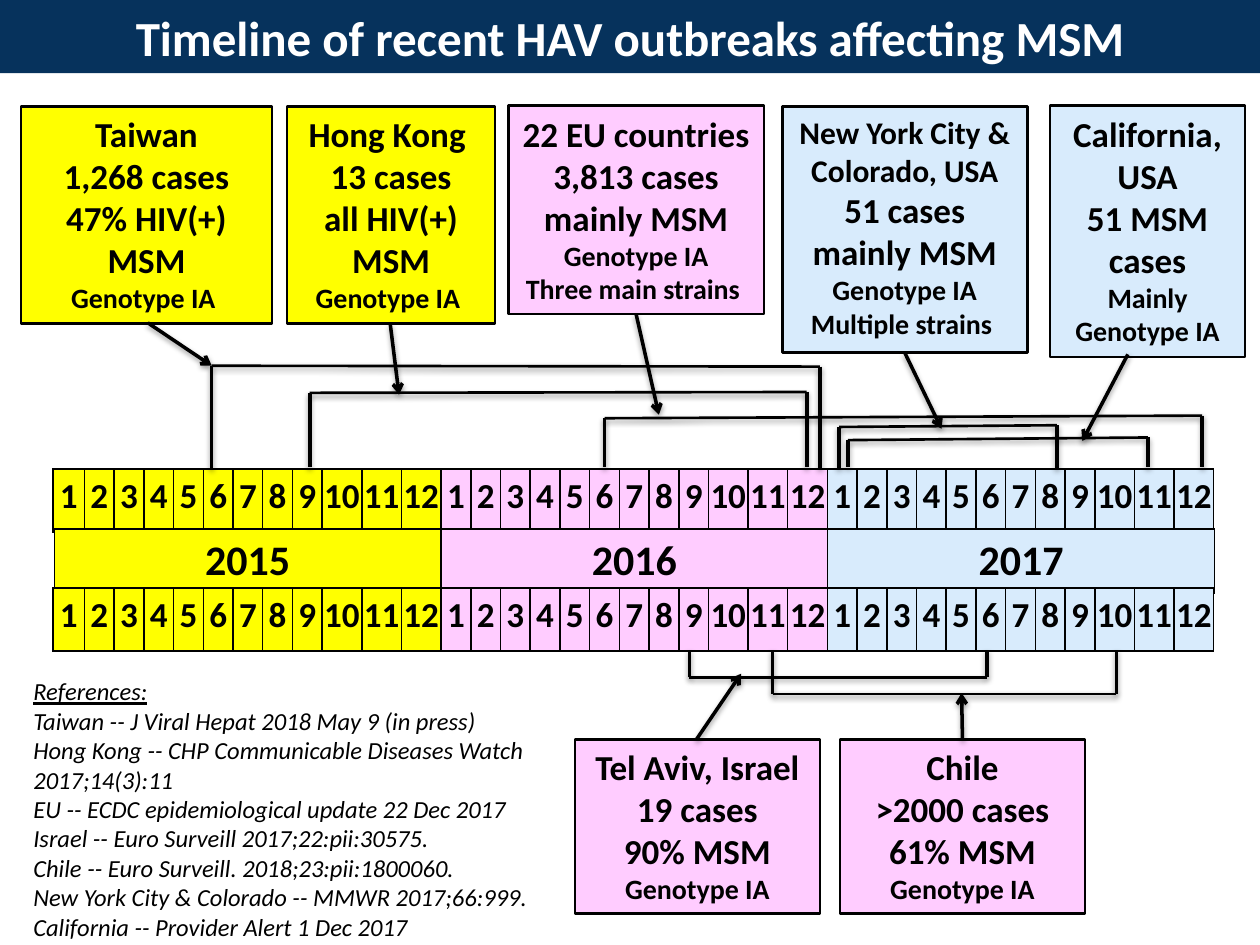
from dataclasses import dataclass

from lxml import etree
from pptx import Presentation
from pptx import util as u
from pptx.dml.color import RGBColor
from pptx.enum import shapes, text
from pptx.oxml import parse_xml
from pptx.oxml.ns import nsdecls, qn


@dataclass(frozen=True)
class Theme:
    font: str = "Calibri"
    navy: str = "06325C"
    yellow: str = "FFFF00"
    pink: str = "FFCCFF"
    blue: str = "D8EBFC"
    black: str = "000000"
    white: str = "FFFFFF"
    title: float = 28
    year: float = 24
    body: float = 20
    place: float = 18
    detail: float = 16
    reference: float = 14
    thin: float = 1.5
    thick: float = 2


THEME = Theme()


@dataclass(frozen=True)
class Line:
    text: str
    size: float = THEME.body


@dataclass(frozen=True)
class Bracket:
    left: float
    right: float
    left_y: float
    right_y: float
    foot: float


@dataclass(frozen=True)
class Outbreak:
    frame: tuple[float, float, float, float]
    fill: str
    lines: tuple[Line, ...]
    arrow: tuple[float, float, float, float]
    bracket: Bracket


def detail(words: str) -> Line:
    return Line(words, THEME.detail)


OUTBREAKS = (
    Outbreak((12, 61, 143.5, 124), THEME.yellow,
             (Line("Taiwan"), Line("1,268 cases"), Line("47% HIV(+) MSM"),
              detail("Genotype IA ")),
             (84.5, 184.5, 121, 209), Bracket(121, 468.5, 209, 209.5, 267.5)),
    Outbreak((164, 61, 119, 124), THEME.yellow,
             (Line("Hong Kong "), Line("13 cases"), Line("all HIV(+) MSM"),
              detail("Genotype IA ")),
             (223, 185, 228, 225.5), Bracket(177, 461, 224.5, 224, 267)),
    Outbreak((290.5, 60.5, 146, 119), THEME.pink,
             (Line("22 EU countries"), Line("3,813 cases"), Line("mainly MSM"),
              detail("Genotype IA"), detail("Three main strains ")),
             (363.5, 179.5, 376.5, 237), Bracket(345.5, 687, 239, 237.5, 267)),
    Outbreak((447, 61, 140, 140.5), THEME.blue,
             (Line("New York City & Colorado, USA", THEME.place),
              Line("51 cases"), Line("mainly MSM"),
              detail("Genotype IA"), detail("Multiple strains ")),
             (517, 201.5, 538, 245), Bracket(479.5, 604, 244, 243, 268)),
    Outbreak((480, 422.5, 140, 99.5), THEME.pink,
             (Line("Chile"), Line(">2000 cases"), Line("61% MSM"),
              detail("Genotype IA")),
             (550, 422.5, 549.5, 396), Bracket(441.5, 638, 396.5, 396.5, 371.5)),
    Outbreak((328.5, 422.5, 140, 99.5), THEME.pink,
             (Line("Tel Aviv, Israel"), Line("19 cases"), Line("90% MSM"),
              detail("Genotype IA")),
             (398, 422.5, 423.5, 385), Bracket(394, 564, 387, 387, 371.5)),
    Outbreak((600, 60.5, 111.5, 143.5), THEME.blue,
             (Line("California, USA"), Line("51 MSM cases"),
              detail("Mainly Genotype IA")),
             (644.5, 202.5, 618.5, 252), Bracket(484.5, 656, 251.5, 250, 267)),
)

YEARS = (("2015", THEME.yellow), ("2016", THEME.pink), ("2017", THEME.blue))
MONTHS = [(str(month), fill) for _, fill in YEARS for month in range(1, 13)]
MONTH_WIDTHS = [18.0] + [17.0 if len(month) == 1 else 22.67 for month, _ in MONTHS[1:]]

REFERENCES = (
    "References:",
    "Taiwan -- J Viral Hepat 2018 May 9 (in press)",
    "Hong Kong -- CHP Communicable Diseases Watch 2017;14(3):11",
    "EU -- ECDC epidemiological update 22 Dec 2017",
    "Israel -- Euro Surveill 2017;22:pii:30575.",
    "Chile -- Euro Surveill. 2018;23:pii:1800060.",
    "New York City & Colorado -- MMWR 2017;66:999.",
    "California -- Provider Alert 1 Dec 2017",
)


def style(para, size: float, color: str = THEME.black, bold: bool = True) -> None:
    for span in para.runs:
        span.font.name = THEME.font
        span.font.size = u.Pt(size)
        span.font.bold = bold
        span.font.color.rgb = RGBColor.from_string(color)


def write(frame, lines: tuple[Line, ...], color: str = THEME.black) -> None:
    frame.word_wrap = True
    frame.text = "\n".join(line.text for line in lines)
    for para, line in zip(frame.paragraphs, lines):
        para.alignment = text.PP_ALIGN.CENTER
        style(para, line.size, color)


def draw_box(page, frame: tuple, fill: str, lines: tuple[Line, ...]):
    box = page.shapes.add_shape(shapes.MSO_SHAPE.RECTANGLE, *map(u.Pt, frame))
    box.shadow.inherit = False
    box.fill.solid()
    box.fill.fore_color.rgb = RGBColor.from_string(fill)
    box.line.color.rgb = RGBColor.from_string(THEME.black)
    box.line.width = u.Pt(THEME.thin)
    box.text_frame.vertical_anchor = text.MSO_ANCHOR.TOP
    write(box.text_frame, lines)
    return box


def draw_line(page, ends: tuple, width: float, arrow: bool = False) -> None:
    line = page.shapes.add_connector(shapes.MSO_CONNECTOR.STRAIGHT, *map(u.Pt, ends))
    line.line.color.rgb = RGBColor.from_string(THEME.black)
    line.line.width = u.Pt(width)
    properties = line._element.spPr
    if arrow:
        etree.SubElement(properties.find(qn("a:ln")), qn("a:tailEnd"), type="arrow")
    properties.append(parse_xml(
        f'<a:effectLst {nsdecls("a")}><a:outerShdw blurRad="{u.Pt(3.1)}" '
        f'dist="{u.Pt(1.6)}" dir="5400000" rotWithShape="0">'
        f'<a:srgbClr val="{THEME.black}"><a:alpha val="38000"/></a:srgbClr>'
        '</a:outerShdw></a:effectLst>'))


def draw_bracket(page, bracket: Bracket) -> None:
    draw_line(page, (bracket.left, bracket.left_y, bracket.right, bracket.right_y), THEME.thin)
    for x, y in ((bracket.left, bracket.left_y), (bracket.right, bracket.right_y)):
        draw_line(page, (x, y, x, bracket.foot), THEME.thick)


def draw_band(page, left: float, top: float, widths: list[float],
              entries, size: float, inset: float) -> None:
    table = page.shapes.add_table(1, len(widths), u.Pt(left), u.Pt(top),
                                  u.Pt(sum(widths)), u.Pt(36)).table
    table.first_row = table.horz_banding = False
    for column, width, cell, (label, fill) in zip(
            table.columns, widths, table.rows[0].cells, entries):
        column.width = u.Pt(width)
        cell.margin_left = cell.margin_right = u.Pt(inset)
        write(cell.text_frame, (Line(label, size),))
        properties = cell._tc.get_or_add_tcPr()
        for side in ("lnL", "lnR", "lnT", "lnB"):
            properties.append(parse_xml(
                f'<a:{side} {nsdecls("a")} w="{u.Pt(1)}"><a:solidFill>'
                f'<a:srgbClr val="{THEME.black}"/></a:solidFill></a:{side}>'))
        cell.fill.solid()
        cell.fill.fore_color.rgb = RGBColor.from_string(fill)


def draw_title(page) -> None:
    words = Line("Timeline of recent HAV outbreaks affecting MSM", THEME.title)
    box = draw_box(page, (0, 0, 720, 41.75), THEME.navy, (words,))
    box.line.fill.background()
    box.text_frame.vertical_anchor = text.MSO_ANCHOR.MIDDLE
    style(box.text_frame.paragraphs[0], THEME.title, THEME.white)


def draw_references(page) -> None:
    frame = page.shapes.add_textbox(*map(u.Pt, (12, 383, 308, 160))).text_frame
    frame.word_wrap = True
    frame.text = "\n".join(REFERENCES)
    for para in frame.paragraphs:
        style(para, THEME.reference, bold=False)
        para.runs[0].font.italic = True
    frame.paragraphs[0].runs[0].font.underline = True


def main() -> None:
    deck = Presentation()
    deck.slide_width, deck.slide_height = u.Pt(720), u.Pt(540)
    page = deck.slides.add_slide(deck.slide_layouts[6])
    draw_band(page, 30.25, 268, MONTH_WIDTHS, MONTHS, THEME.body, 0)
    draw_band(page, 31, 302.25, [221.0] * len(YEARS), YEARS, THEME.year, 7.2)
    draw_band(page, 30.25, 336, MONTH_WIDTHS, MONTHS, THEME.body, 0)
    for outbreak in OUTBREAKS:
        draw_bracket(page, outbreak.bracket)
        draw_box(page, outbreak.frame, outbreak.fill, outbreak.lines)
        draw_line(page, outbreak.arrow, THEME.thick, arrow=True)
    draw_title(page)
    draw_references(page)
    deck.save("out.pptx")


if __name__ == "__main__":
    main()
